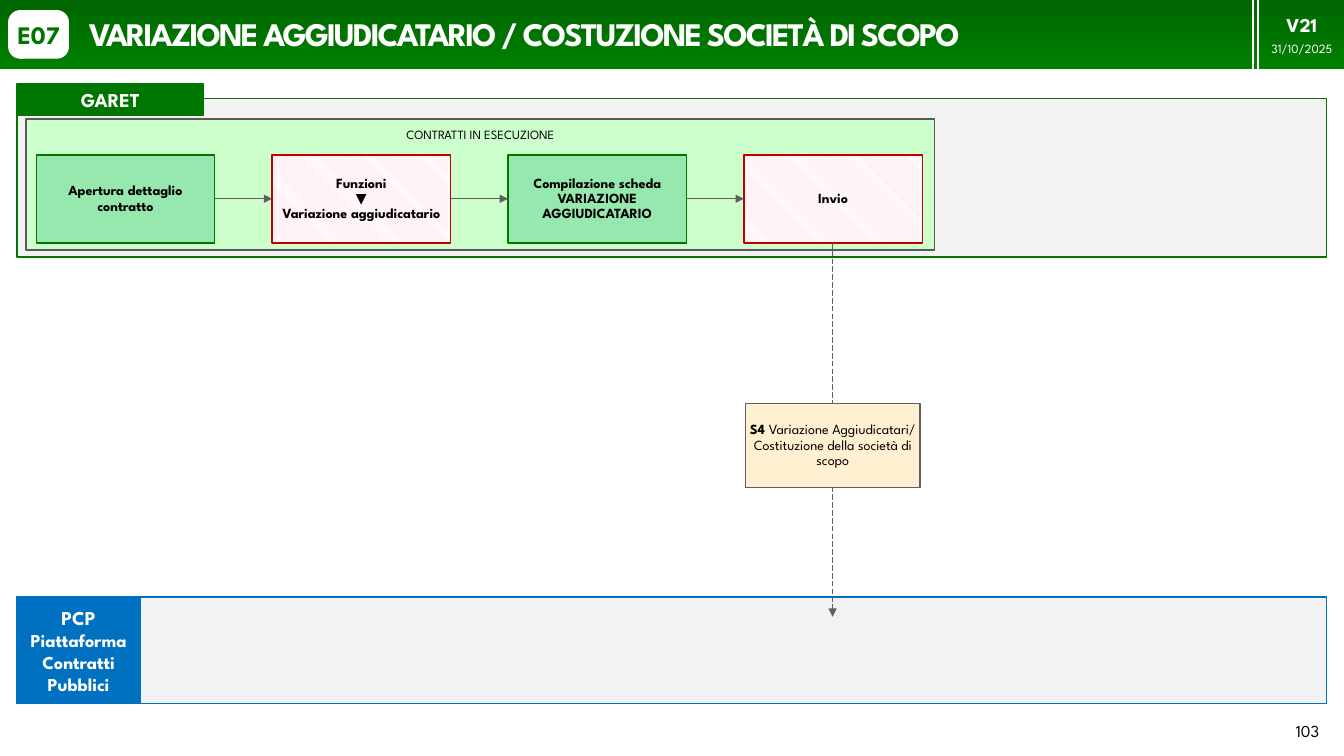
from pptx import Presentation
from pptx.dml.color import RGBColor
from pptx.enum import dml, shapes, text
from pptx.oxml.ns import qn
from pptx.util import Pt
from lxml import etree

FONT = "League Spartan"
WHITE = RGBColor(0xFF, 0xFF, 0xFF)
BLACK = RGBColor(0, 0, 0)
DARK_GREEN = RGBColor(0, 0x66, 0)
LIGHT_GREEN = RGBColor(0, 0x80, 0)
GREEN = RGBColor(0, 0x76, 0)
MINT = RGBColor(0x97, 0xE8, 0xAE)
PALE_GREEN = RGBColor(0xCD, 0xFF, 0xCD)
RED = RGBColor(0xC0, 0, 0)
PINK = RGBColor(0xFF, 0xBF, 0xCC)
BLUE = RGBColor(0, 0x70, 0xC0)
CREAM = RGBColor(0xFF, 0xF0, 0xD1)
PANEL_GRAY = RGBColor(0xF2, 0xF2, 0xF2)
GRAY = RGBColor(0x5F, 0x5F, 0x5F)
FRAME_GRAY = RGBColor(0x59, 0x59, 0x59)

TITLE = [[("VARIAZIONE AGGIUDICATARIO / COSTUZIONE SOCIETÀ DI SCOPO", 23.5, True)]]
CODE = [[("E07", 18, True)]]
VERSION = [[("V21", 14, True)], [("31/10/2025", 9, False)]]
PAGE = [[("103", 12, False)]]
SYSTEM = [[("GARET", 14, True)]]
PHASE = [[("CONTRATTI IN ESECUZIONE", 9, False)]]
STEPS = [
    (["Apertura dettaglio", "contratto"], False),
    (["Funzioni", "▼", "Variazione aggiudicatario"], True),
    (["Compilazione scheda", "VARIAZIONE AGGIUDICATARIO"], False),
    (["Invio"], True),
]
MESSAGE = [
    [("S4 ", 10, True), ("Variazione Aggiudicatari/", 10, False)],
    [("Costituzione della società di scopo", 10, False)],
]
PLATFORM = [[("PCP", 14, True), (" Piattaforma Contratti Pubblici", 13, True)]]

PANEL_LEFT, PANEL_WIDTH = 12.2, 935.3
PLATFORM_TOP, PLATFORM_HEIGHT = 426.4, 76.3
STEP_LEFT, STEP_TOP, STEP_WIDTH, STEP_HEIGHT, STEP_PITCH = 25.9, 110.8, 127.4, 62.7, 168.5
STEP_MIDDLE = 142
SEND_X, SEND_END = 594.7, 440.6
NORMAL = (7.2, 3.6, 7.2, 3.6)
TIGHT = (2.9, 3.6, 2.9, 3.6)
NO_INSETS = (0, 0, 0, 0)
RECTANGLE = shapes.MSO_SHAPE.RECTANGLE
ROUNDED = shapes.MSO_SHAPE.ROUNDED_RECTANGLE
CENTER = text.PP_ALIGN.CENTER
MIDDLE = text.MSO_ANCHOR.MIDDLE


def style_font(font, size, bold, color):
    font.name = FONT
    font.size = Pt(size)
    font.bold = bold
    font.color.rgb = color


def write(shape, paragraphs, color, insets=NORMAL, align=CENTER, anchor=MIDDLE, spacing=1.0, after=0):
    frame = shape.text_frame
    frame.word_wrap = True
    frame.auto_size = text.MSO_AUTO_SIZE.NONE
    frame.vertical_anchor = anchor
    frame.margin_left, frame.margin_top, frame.margin_right, frame.margin_bottom = map(Pt, insets)
    for index, runs in enumerate(paragraphs):
        paragraph = frame.paragraphs[0] if index == 0 else frame.add_paragraph()
        paragraph.alignment = align
        paragraph.line_spacing = spacing
        paragraph.space_before = Pt(0)
        paragraph.space_after = Pt(after if index < len(paragraphs) - 1 else 0)
        for words, size, bold in runs:
            run = paragraph.add_run()
            run.text = words
            style_font(run.font if len(runs) > 1 else paragraph.font, size, bold, color)


def add_box(slide, bounds, fill=None, line=None, kind=RECTANGLE):
    shape = slide.shapes.add_shape(kind, *map(Pt, bounds))
    shape.shadow.inherit = False
    if fill is None:
        shape.fill.background()
    else:
        shape.fill.solid()
        shape.fill.fore_color.rgb = fill
    if line is None:
        shape.line.fill.background()
    else:
        shape.line.color.rgb = line
        shape.line.width = Pt(1)
    return shape


def add_line(slide, start, end, color, width, arrow=False, dash=None):
    connector = slide.shapes.add_connector(shapes.MSO_CONNECTOR.STRAIGHT, *map(Pt, start + end))
    connector.line.color.rgb = color
    connector.line.width = Pt(width)
    if dash is not None:
        connector.line.dash_style = dash
    properties = connector.element.spPr
    if arrow:
        etree.SubElement(properties.find(qn("a:ln")), qn("a:tailEnd"), type="triangle")
    etree.SubElement(properties, qn("a:effectLst"))


def add_header(slide):
    title = slide.shapes.title
    band = add_box(slide, (0, 0, 960, 49.6))
    band.fill.gradient()
    band.fill.gradient_angle = 270
    for stop, position, color in zip(band.fill.gradient_stops, (0, 1), (DARK_GREEN, LIGHT_GREEN)):
        stop.position = position
        stop.color.rgb = color
    title.element.addprevious(band.element)

    title.left, title.top, title.width, title.height = map(Pt, (56.2, 5.8, 868.3, 39.6))
    write(title, TITLE, WHITE, align=text.PP_ALIGN.LEFT, spacing=0.9)
    for run_properties in title.element.iter(qn("a:rPr"), qn("a:defRPr")):
        run_properties.set("spc", "-140")

    badge = add_box(slide, (6.3, 7.7, 42.5, 33.8), WHITE, WHITE, ROUNDED)
    badge.adjustments[0] = 0.242
    write(badge, CODE, GREEN, NO_INSETS)
    for x in (895, 898.6):
        add_line(slide, (x, 0), (x, 54), WHITE, 1.5)
    version = add_box(slide, (899.8, 0, 60.2, 49), kind=ROUNDED)
    version.adjustments[0] = 0
    write(version, VERSION, WHITE, NO_INSETS, after=3)


def add_panels(slide):
    add_box(slide, (PANEL_LEFT, PLATFORM_TOP, PANEL_WIDTH, PLATFORM_HEIGHT), PANEL_GRAY, BLUE)
    platform = add_box(slide, (PANEL_LEFT, PLATFORM_TOP, 87.8, PLATFORM_HEIGHT), BLUE, BLUE)
    write(platform, PLATFORM, WHITE)
    add_box(slide, (PANEL_LEFT, 70.5, PANEL_WIDTH, 113.2), PANEL_GRAY, GREEN)
    phase = add_box(slide, (18.7, 85.1, 648.7, 93.5), PALE_GREEN, FRAME_GRAY)
    write(phase, PHASE, BLACK, (2.9, 5.8, 2.9, 3.6), anchor=text.MSO_ANCHOR.TOP)
    system = add_box(slide, (PANEL_LEFT, 59.9, 133.4, 22.2), GREEN, GREEN)
    write(system, SYSTEM, WHITE)


def add_steps(slide):
    for index, (lines, is_action) in enumerate(STEPS):
        left = STEP_LEFT + index * STEP_PITCH
        step = add_box(slide, (left, STEP_TOP, STEP_WIDTH, STEP_HEIGHT), MINT, RED if is_action else GREEN)
        if is_action:
            step.fill.patterned()
            step.fill.pattern = dml.MSO_PATTERN.LIGHT_DOWNWARD_DIAGONAL
            step.fill.fore_color.rgb = PINK
            step.fill.back_color.rgb = WHITE
        write(step, [[(line, 10, True)] for line in lines], BLACK, TIGHT, spacing=0.9)
        if index:
            add_line(slide, (left - STEP_PITCH + STEP_WIDTH, STEP_MIDDLE), (left, STEP_MIDDLE), GRAY, 0.5, True)


def add_message(slide):
    add_line(slide, (SEND_X, STEP_TOP + STEP_HEIGHT), (SEND_X, SEND_END), GRAY, 0.5, True,
             dml.MSO_LINE.LONG_DASH)
    message = add_box(slide, (532.5, 288.2, 124.7, 60), CREAM, GRAY)
    write(message, MESSAGE, BLACK, TIGHT, spacing=0.9)


def main():
    presentation = Presentation()
    presentation.slide_width, presentation.slide_height = Pt(960), Pt(540)
    slide = presentation.slides.add_slide(presentation.slide_layouts[5])
    add_header(slide)
    add_panels(slide)
    add_steps(slide)
    add_message(slide)
    page = slide.shapes.add_textbox(*map(Pt, (733.5, 507.6, 216, 28.8)))
    write(page, PAGE, BLACK, align=text.PP_ALIGN.RIGHT)
    presentation.save("out.pptx")


if __name__ == "__main__":
    main()
